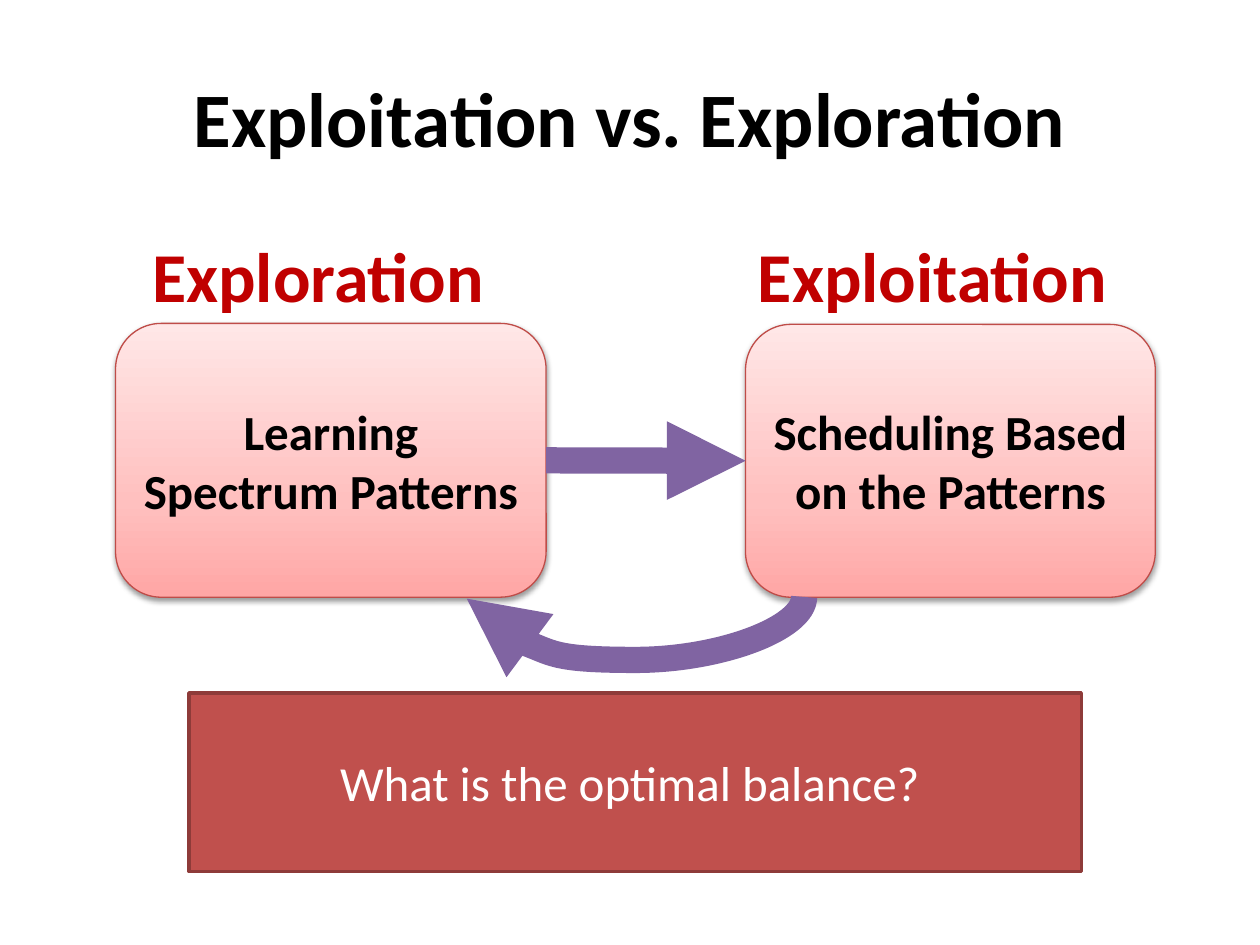
from lxml import etree
from pptx import Presentation
from pptx import util as u
from pptx.dml import color
from pptx.enum import shapes, text
from pptx.oxml import ns

FONT = "Calibri"
PURPLE = "8064A2"
BOX_GRADIENT = [(0, "FFA6A5"), (35, "FFC0BF"), (100, "FFE7E7")]


def rgb(value):
    return color.RGBColor.from_string(value)


def add_child(parent, tag, **attributes):
    child = etree.SubElement(parent, ns.qn(tag))
    for name, value in attributes.items():
        child.set(name, str(value))
    return child


def lengths(*values):
    return [u.Cm(value) for value in values]


def write(shape, words, size, colour, bold=True, align=text.PP_ALIGN.CENTER,
          anchor=text.MSO_ANCHOR.MIDDLE):
    frame = shape.text_frame
    frame.word_wrap = True
    frame.vertical_anchor = anchor
    paragraph = frame.paragraphs[0]
    paragraph.text = words
    paragraph.alignment = align
    font = paragraph.font
    font.name = FONT
    font.size = u.Pt(size)
    font.bold = bold
    font.color.rgb = rgb(colour)


def set_title(slide, words):
    title = slide.shapes.title
    title.left, title.top, title.width, title.height = lengths(1.27, 0.76, 22.86, 3.18)
    write(title, words, 44, "000000")


def add_heading(slide, words, left):
    heading = slide.shapes.add_textbox(*lengths(left, 4.57, 7.82, 1.96))
    write(heading, words, 40, "C00000", align=text.PP_ALIGN.LEFT,
          anchor=text.MSO_ANCHOR.TOP)
    heading.text_frame.auto_size = text.MSO_AUTO_SIZE.SHAPE_TO_FIT_TEXT


def add_box(slide, kind, area, line_colour, line_width):
    box = slide.shapes.add_shape(kind, *lengths(*area))
    box.shadow.inherit = False
    box.line.color.rgb = rgb(line_colour)
    box.line.width = u.Pt(line_width)
    return box


def apply_gradient(shape, stops):
    shape.fill.gradient()
    shape.fill.gradient_angle = 90
    stop_list = shape.element.spPr.find(".//" + ns.qn("a:gsLst"))
    for stop in list(stop_list):
        stop_list.remove(stop)
    for position, colour in stops:
        stop = add_child(stop_list, "a:gs", pos=position * 1000)
        add_child(stop, "a:srgbClr", val=colour)


def apply_shadow(shape):
    effects = shape.element.spPr.find(ns.qn("a:effectLst"))
    shadow = add_child(effects, "a:outerShdw", blurRad=40000, dist=20000,
                       dir=5400000, rotWithShape=0)
    black = add_child(shadow, "a:srgbClr", val="000000")
    add_child(black, "a:alpha", val=38000)


def add_step(slide, words, area):
    step = add_box(slide, shapes.MSO_SHAPE.ROUNDED_RECTANGLE, area, "BF4C48", 0.75)
    apply_gradient(step, BOX_GRADIENT)
    apply_shadow(step)
    write(step, words, 28, "000000")


def add_question(slide, words, area):
    question = add_box(slide, shapes.MSO_SHAPE.RECTANGLE, area, "8E3B39", 2)
    question.fill.solid()
    question.fill.fore_color.rgb = rgb("C0504D")
    write(question, words, 28, "FFFFFF", bold=False)


def add_arrow(slide, kind, start, end):
    arrow = slide.shapes.add_connector(kind, *lengths(*start, *end))
    arrow.line.color.rgb = rgb(PURPLE)
    arrow.line.width = u.Pt(15)
    add_child(arrow.line._get_or_add_ln(), "a:tailEnd", type="triangle")
    add_child(arrow.element.spPr, "a:effectLst")
    return arrow


def add_return_arrow(slide, centre_x, centre_y, span, dip):
    rise = 0.035
    left, top = centre_x - rise / 2, centre_y - span / 2
    arrow = add_arrow(slide, shapes.MSO_CONNECTOR.CURVE,
                      (left, top), (left + rise, top + span))
    properties = arrow.element.spPr
    properties.find(ns.qn("a:xfrm")).set("rot", str(90 * 60000))
    guides = properties.find(ns.qn("a:prstGeom")).find(ns.qn("a:avLst"))
    add_child(guides, "a:gd", name="adj1", fmla=f"val {round(dip / rise * 100000)}")


def main():
    presentation = Presentation()
    presentation.slide_width, presentation.slide_height = lengths(25.4, 19.05)
    slide = presentation.slides.add_slide(presentation.slide_layouts[5])

    set_title(slide, "Exploitation vs. Exploration")
    add_step(slide, "Learning Spectrum Patterns", (2.33, 6.52, 8.68, 5.52))
    add_step(slide, "Scheduling Based on the Patterns", (15.03, 6.54, 8.26, 5.5))
    add_arrow(slide, shapes.MSO_CONNECTOR.STRAIGHT, (11.01, 9.28), (15.03, 9.29))
    add_return_arrow(slide, centre_x=12.81, centre_y=12.05, span=6.8, dip=1.27)
    add_heading(slide, "Exploration", 2.82)
    add_heading(slide, "Exploitation", 15.03)
    add_question(slide, "What is the optimal balance? ", (3.81, 13.97, 17.99, 3.6))

    presentation.save("out.pptx")


if __name__ == "__main__":
    main()
